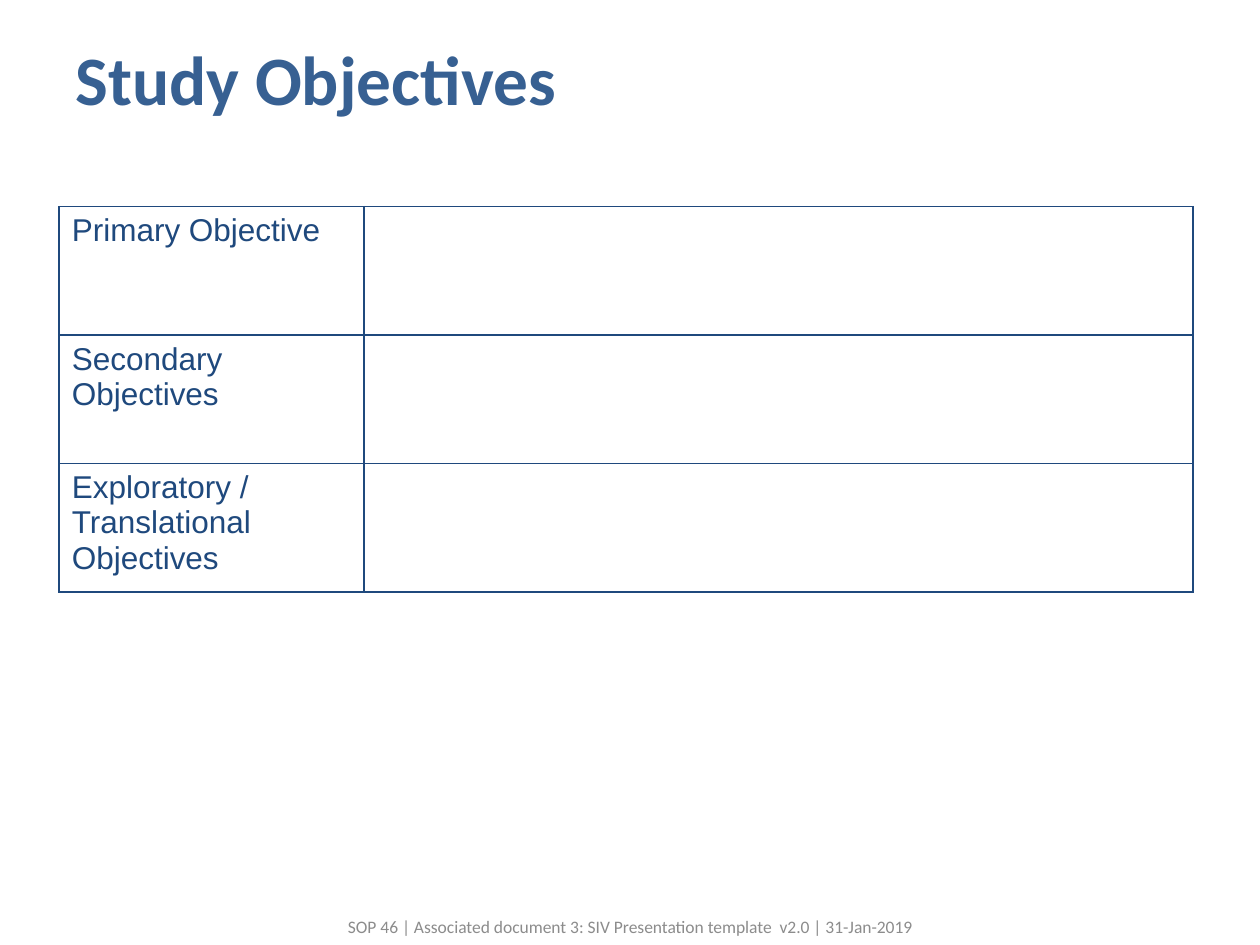
from lxml.etree import SubElement
from pptx import Presentation
from pptx.dml.color import RGBColor as RGB
from pptx.enum.text import MSO_ANCHOR as Anchor, PP_ALIGN as Align
from pptx.oxml.ns import qn
from pptx.util import Inches, Pt

COLORS = {"title": "376092", "table": "1F497D", "footer": "8C8C8C"}
WIDTH, HEIGHT = Inches(10), Inches(7.5)
GOALS = [
    "Primary Objective",
    "Secondary Objectives",
    "Exploratory / Translational Objectives",
]
FOOTER = "SOP 46 | Associated document 3: SIV Presentation template  v2.0 | 31-Jan-2019"


def style(frame, size, face, color, align=Align.LEFT, bold=False):
    for par in frame.paragraphs:
        par.alignment = align
        for font in [par.font] + [run.font for run in par.runs]:
            font.size, font.name, font.bold = Pt(size), face, bold
            font.color.rgb = RGB.from_string(COLORS[color])


def add_title(slide, text):
    title = slide.shapes.title
    title.left, title.top = Inches(0.5), Inches(0.3)
    title.width, title.height = Inches(9), Inches(0.64)
    frame = title.text_frame
    frame.text = text
    frame.vertical_anchor = Anchor.MIDDLE
    style(frame, 39.6, "Calibri", "title", bold=True)


def add_border(cell):
    props = cell._tc.get_or_add_tcPr()
    for at, side in enumerate(("lnL", "lnR", "lnT", "lnB")):
        line = SubElement(props, qn(f"a:{side}"), w=str(Pt(1)))
        props.insert(at, line)
        fill = SubElement(line, qn("a:solidFill"))
        SubElement(fill, qn("a:srgbClr"), val=COLORS["table"])


def add_goals(slide, goals):
    """Draw a grid with one goal per row and a blank cell beside it."""
    row = Inches(1.02)
    frame = slide.shapes.add_table(
        len(goals), 2, Inches(0.47), Inches(1.64), Inches(9), row * len(goals)
    )
    table = frame.table
    table.first_row = table.horz_banding = False
    for col, width in zip(table.columns, (2.42, 6.58)):
        col.width = Inches(width)
    for line, goal in zip(table.rows, goals):
        line.height = row
        line.cells[0].text = goal
    for cell in table.iter_cells():
        cell.fill.background()
        style(cell.text_frame, 18, "Arial", "table")
        add_border(cell)


def add_footer(slide, text):
    width = Inches(5.76)
    box = slide.shapes.add_textbox(
        (WIDTH - width) // 2, Inches(7.24), width, Inches(0.22)
    )
    frame = box.text_frame
    frame.word_wrap = True
    frame.text = text
    frame.vertical_anchor = Anchor.MIDDLE
    style(frame, 10, "Calibri", "footer", Align.CENTER)


def main():
    deck = Presentation()
    deck.slide_width, deck.slide_height = WIDTH, HEIGHT
    slide = deck.slides.add_slide(deck.slide_layouts[5])
    add_title(slide, "Study Objectives")
    add_goals(slide, GOALS)
    add_footer(slide, FOOTER)
    deck.save("out.pptx")


if __name__ == "__main__":
    main()
